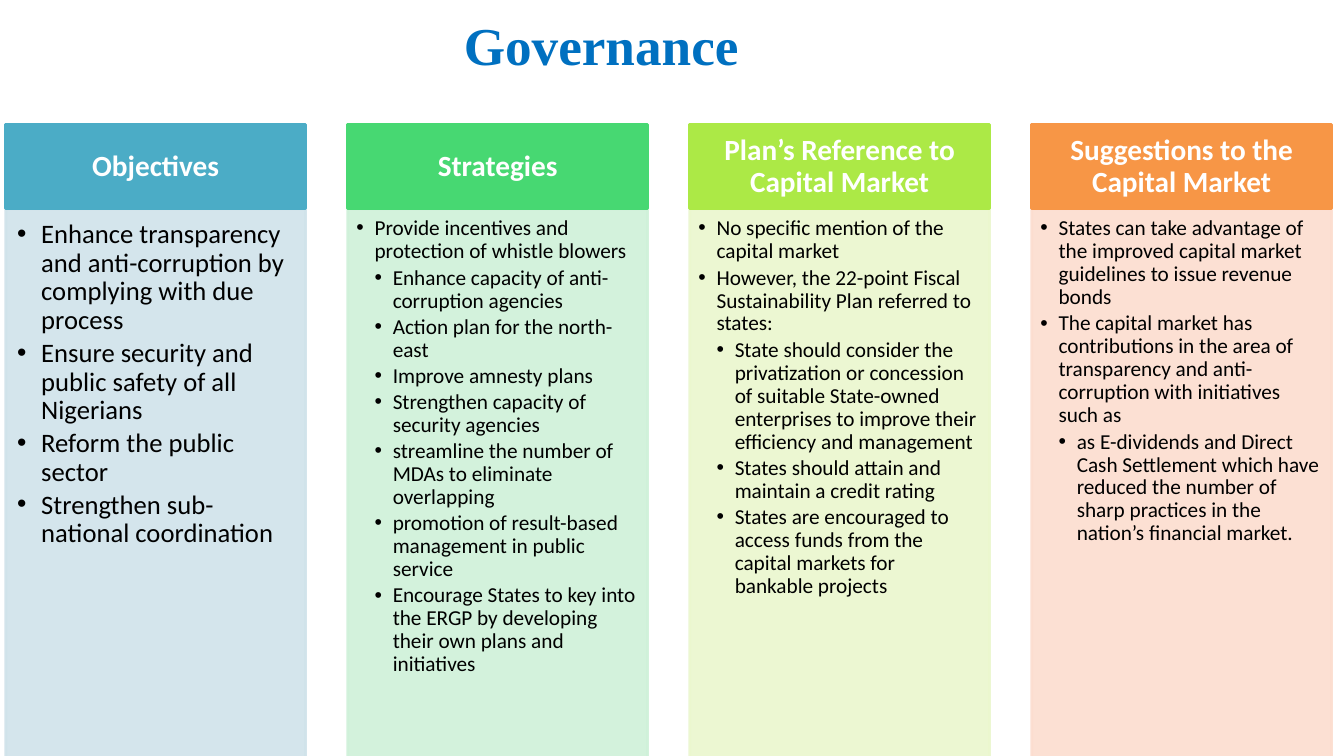
from pptx import Presentation
from pptx.dml.color import RGBColor
from pptx.enum.shapes import MSO_SHAPE
from pptx.enum.text import MSO_ANCHOR, MSO_AUTO_SIZE, PP_ALIGN
from pptx.oxml.ns import qn
from pptx.util import Inches, Pt
from lxml.etree import SubElement

# Content: heading, heading colour, list colour, type size, (level, text) items
TITLE = "Governance"
COLUMNS = [
    ("Objectives", "4BACC6", "D0E3EA", 20, [
        (1, "Enhance transparency and anti-corruption by complying with due process"),
        (1, "Ensure security and public safety of all Nigerians"),
        (1, "Reform the public sector"),
        (1, "Strengthen sub-national coordination"),
    ]),
    ("Strategies", "47D872", "CFF1D9", 16, [
        (1, "Provide incentives and protection of whistle blowers"),
        (2, "Enhance capacity of anti-corruption agencies"),
        (2, "Action plan for the north-east"),
        (2, "Improve amnesty plans"),
        (2, "Strengthen capacity of security agencies"),
        (2, "streamline the number of MDAs to eliminate overlapping"),
        (2, "promotion of result-based management in public service"),
        (2, "Encourage States to key into the ERGP by developing their own "
            "plans and initiatives"),
    ]),
    ("Plan’s Reference to Capital Market", "ACE946", "EBF7CE", 16, [
        (1, "No specific mention of the capital market"),
        (1, "However, the 22-point Fiscal Sustainability Plan referred to states:"),
        (2, "State should consider the privatization or concession of suitable "
            "State-owned enterprises to improve their efficiency and management"),
        (2, "States should attain and maintain a credit rating"),
        (2, "States are encouraged to access funds from the capital markets for "
            "bankable projects"),
    ]),
    ("Suggestions to the Capital Market", "F79646", "FCDDCF", 16, [
        (1, "States can take advantage of the improved capital market guidelines "
            "to issue revenue bonds"),
        (1, "The capital market has contributions in the area of transparency and "
            "anti-corruption with initiatives such as"),
        (2, "as E-dividends and Direct Cash Settlement which have reduced the "
            "number of sharp practices in the nation’s financial market."),
    ]),
]

THEME = {
    "title": ("Times New Roman", 40, "0070C0", True),
    "head": ("Calibri", 22, "FFFFFF", True),
    "list": ("Calibri", None, "000000", False),
    "line": 2,
    "alpha": 90,
}

# Layout in inches
LEFT, PITCH, WIDTH = 0.06, 3.57, 3.13
HEAD_TOP, HEAD_H, LIST_H = 1.3, 0.88, 5.76
# Insets (left, top, right, bottom) and indent step for each list size
LIST_FIT = {20: ((0.12, 0.12, 0.16, 0.17), 0.25),
            16: ((0.09, 0.09, 0.12, 0.14), 0.19)}


def place(shape, left, top, width, height):
    shape.left, shape.top = Inches(left), Inches(top)
    shape.width, shape.height = Inches(width), Inches(height)


def paint(shape, color):
    shape.fill.solid()
    shape.fill.fore_color.rgb = RGBColor.from_string(color)
    shape.line.color.rgb = RGBColor.from_string(color)
    shape.line.width = Pt(THEME["line"])


def fade(shape):
    for color in shape._element.spPr.iter(qn("a:srgbClr")):
        SubElement(color, qn("a:alpha"), val=str(THEME["alpha"] * 1000))


def frame(shape, insets, anchor):
    text = shape.text_frame
    text.word_wrap = True
    text.auto_size = MSO_AUTO_SIZE.NONE
    text.vertical_anchor = anchor
    (text.margin_left, text.margin_top,
     text.margin_right, text.margin_bottom) = map(Inches, insets)
    return text


def style(para, role, size=None):
    name, base, color, bold = THEME[role]
    for run in para.runs:
        run.font.name, run.font.size = name, Pt(size or base)
        run.font.color.rgb = RGBColor.from_string(color)
        run.font.bold = bold


def bullet(para, level, step):
    props = para._p.get_or_add_pPr()
    props.set("marL", str(Inches(level * step)))
    props.set("indent", str(-Inches(step)))
    SubElement(props, qn("a:buFont"), typeface="Arial")
    SubElement(props, qn("a:buChar"), char="•")


def add_head(slide, left, words, color):
    head = slide.shapes.add_shape(
        MSO_SHAPE.RECTANGLE, Inches(left), Inches(HEAD_TOP),
        Inches(WIDTH), Inches(HEAD_H))
    head.shadow.inherit = False
    paint(head, color)
    text = frame(head, (0.17, 0.1, 0.17, 0.1), MSO_ANCHOR.MIDDLE)
    text.text = words
    para = text.paragraphs[0]
    para.alignment = PP_ALIGN.CENTER
    para.line_spacing = 0.9
    style(para, "head")


def fill_list(box, left, color, size, items):
    place(box, left, HEAD_TOP + HEAD_H, WIDTH, LIST_H)
    paint(box, color)
    fade(box)
    insets, step = LIST_FIT[size]
    text = frame(box, insets, MSO_ANCHOR.TOP)
    text.text = "\n".join(words for _, words in items)
    for para, (level, _) in zip(text.paragraphs, items):
        para.level = level - 1
        para.alignment = PP_ALIGN.LEFT
        para.line_spacing = 0.9
        para.space_before = Pt(0)
        para.space_after = Pt(0.15 * size)
        bullet(para, level, step)
        style(para, "list", size)


def main():
    deck = Presentation()
    deck.slide_width, deck.slide_height = Inches(14.03), Inches(7.89)
    # The comparison layout has a title and four body placeholders
    slide = deck.slides.add_slide(deck.slide_layouts[4])

    # Title
    title = slide.shapes.title
    place(title, -0.04, -0.01, 12.63, 0.94)
    text = frame(title, (0.13, 0.06, 0.13, 0.06), MSO_ANCHOR.MIDDLE)
    text.text = TITLE
    text.paragraphs[0].alignment = PP_ALIGN.CENTER
    style(text.paragraphs[0], "title")

    # Four columns: heading above list
    bodies = list(slide.placeholders)[1:]
    for i, (body, column) in enumerate(zip(bodies, COLUMNS)):
        words, dark, pale, size, items = column
        left = LEFT + i * PITCH
        add_head(slide, left, words, dark)
        fill_list(body, left, pale, size, items)

    deck.save("out.pptx")


if __name__ == "__main__":
    main()
